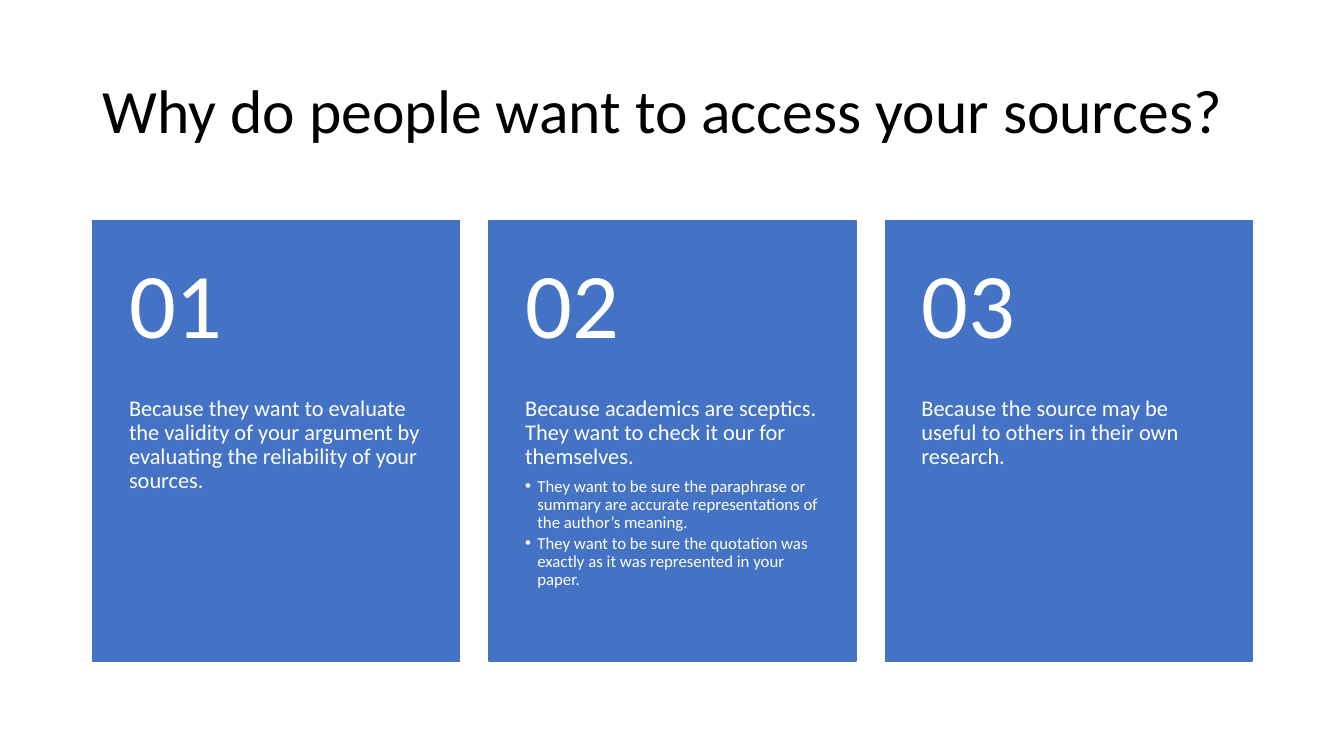
from lxml.etree import SubElement
from pptx import Presentation
from pptx.dml.color import RGBColor
from pptx.enum.shapes import MSO_SHAPE
from pptx.enum.text import MSO_ANCHOR, PP_ALIGN
from pptx.oxml.ns import qn
from pptx.util import Inches, Pt

TITLE = "Why do people want to access your sources?"
CARDS = [
    ("01", "Because they want to evaluate the validity of your argument by "
           "evaluating the reliability of your sources.", []),
    ("02", "Because academics are sceptics. They want to check it our for themselves.",
     ["They want to be sure the paraphrase or summary are accurate "
      "representations of the author’s meaning.",
      "They want to be sure the quotation was exactly as it was represented in your paper."]),
    ("03", "Because the source may be useful to others in their own research.", []),
]
FONT, BLACK, WHITE, BLUE = "Calibri", "000000", "FFFFFF", "4472C4"
LEFT, CARD_TOP, CONTENT_WIDTH = 0.92, 2.19, 11.5
CARD_WIDTH, CARD_HEIGHT, NUMBER_HEIGHT = 3.64, 4.37, 1.75
INSET, BULLET_INDENT = 0.36, 0.12


def color(hex_string):
    return RGBColor.from_string(hex_string)


def write(paragraph, text, size, font_color=WHITE, space_after=0):
    paragraph.alignment = PP_ALIGN.LEFT
    paragraph.line_spacing = 0.9
    paragraph.space_before = Pt(0)
    paragraph.space_after = Pt(space_after)
    run = paragraph.add_run()
    run.text = text
    run.font.name = FONT
    run.font.size = Pt(size)
    run.font.color.rgb = color(font_color)


def add_bullet(paragraph):
    properties = paragraph._p.get_or_add_pPr()
    properties.set("marL", str(Inches(BULLET_INDENT)))
    properties.set("indent", str(-Inches(BULLET_INDENT)))
    SubElement(properties, qn("a:buFont")).set("typeface", "Arial")
    SubElement(properties, qn("a:buChar")).set("char", "•")


def add_text_frame(left, top, height, anchor, inset_top, inset_bottom):
    box = slide.shapes.add_textbox(
        Inches(left), Inches(top), Inches(CARD_WIDTH), Inches(height))
    frame = box.text_frame
    frame.word_wrap = True
    frame.vertical_anchor = anchor
    frame.margin_left = frame.margin_right = Inches(INSET)
    frame.margin_top, frame.margin_bottom = Inches(inset_top), Inches(inset_bottom)
    return frame


def add_card(left, number, reason, details):
    card = slide.shapes.add_shape(
        MSO_SHAPE.RECTANGLE, Inches(left), Inches(CARD_TOP),
        Inches(CARD_WIDTH), Inches(CARD_HEIGHT))
    card.shadow.inherit = False
    card.fill.solid()
    card.fill.fore_color.rgb = color(BLUE)
    card.line.color.rgb = color(BLUE)
    card.line.width = Pt(1)

    body = add_text_frame(left, CARD_TOP + NUMBER_HEIGHT, CARD_HEIGHT - NUMBER_HEIGHT,
                          MSO_ANCHOR.TOP, 0, INSET)
    write(body.paragraphs[0], reason, 16, space_after=5.6)
    for detail in details:
        paragraph = body.add_paragraph()
        paragraph.level = 1
        write(paragraph, detail, 12, space_after=1.8)
        add_bullet(paragraph)

    heading = add_text_frame(left, CARD_TOP, NUMBER_HEIGHT,
                             MSO_ANCHOR.MIDDLE, INSET / 2, INSET / 2)
    write(heading.paragraphs[0], number, 66, space_after=23.1)


presentation = Presentation()
presentation.slide_width, presentation.slide_height = Inches(13.33), Inches(7.5)
slide = presentation.slides.add_slide(presentation.slide_layouts[5])

title = slide.shapes.title
title.left, title.top = Inches(LEFT), Inches(0.4)
title.width, title.height = Inches(CONTENT_WIDTH), Inches(1.45)
title.text_frame.vertical_anchor = MSO_ANCHOR.MIDDLE
write(title.text_frame.paragraphs[0], TITLE, 44, BLACK)

card_step = (CONTENT_WIDTH - CARD_WIDTH) / (len(CARDS) - 1)
for index, (number, reason, details) in enumerate(CARDS):
    add_card(LEFT + index * card_step, number, reason, details)

presentation.save("out.pptx")
